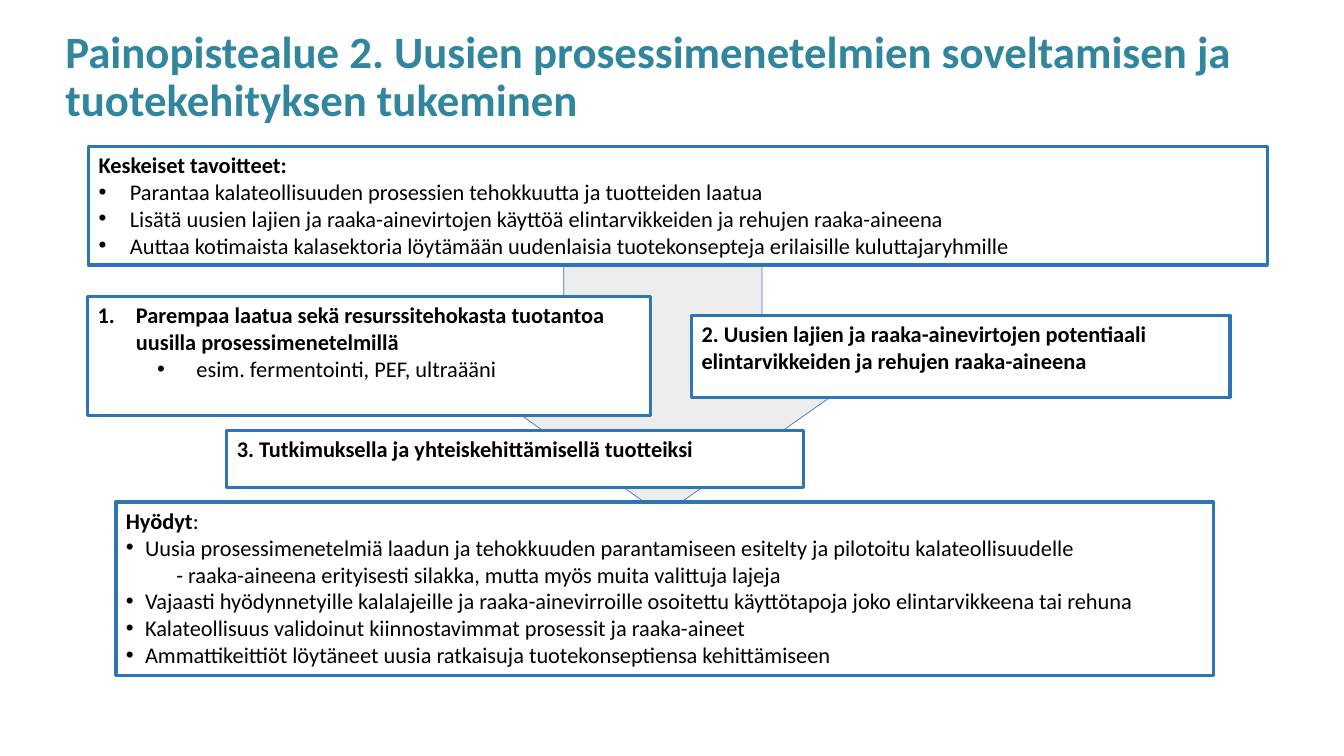
import pptx
import pptx.dml.color
import pptx.enum.shapes
import pptx.enum.text
import pptx.oxml
import pptx.oxml.ns
import pptx.util

Inches = pptx.util.Inches
SHAPES = pptx.enum.shapes.MSO_SHAPE
ANCHORS = pptx.enum.text.MSO_ANCHOR

FONT = "Calibri"
TEAL, BLUE, ARROW_BLUE = "31859C", "2E75B6", "4472C4"
BLACK, WHITE, GREY = "000000", "FFFFFF", "EDEDED"

TITLE = "Painopistealue 2. Uusien prosessimenetelmien soveltamisen ja tuotekehityksen tukeminen"
TITLE_AREA = (0.55, 0.24, 11.95, 1.07)
ARROW_AREA = (4.61, 2.34, 3.93, 2.77)

HEADING = {"bold": True}
NUMBERED = {"bold": True, "margin": 0.38, "hanging": 0.38, "bullet": "1."}
EXAMPLE = {"margin": 0.98, "hanging": 0.39, "bullet": "•"}
GOAL = {"margin": 0.31, "hanging": 0.31, "bullet": "•"}
BENEFIT = {"margin": 0.19, "hanging": 0.19, "bullet": "•"}
DETAIL = {"margin": 0.5, "level": 1}

BOXES = [
    ((2.25, 4.27, 5.72, 0.57), [
        ("3. Tutkimuksella ja yhteiskehittämisellä tuotteiksi", HEADING),
    ]),
    ((0.87, 2.94, 5.58, 1.18), [
        ("Parempaa laatua sekä resurssitehokasta tuotantoa uusilla prosessimenetelmillä", NUMBERED),
        ("esim. fermentointi, PEF, ultraääni", EXAMPLE),
    ]),
    ((1.15, 4.98, 10.89, 1.72), [
        ("Hyödyt", {"bold": True, "plain_ending": ":"}),
        ("Uusia prosessimenetelmiä laadun ja tehokkuuden parantamiseen esitelty ja pilotoitu kalateollisuudelle", BENEFIT),
        ("- raaka-aineena erityisesti silakka, mutta myös muita valittuja lajeja", DETAIL),
        ("Vajaasti hyödynnetyille kalalajeille ja raaka-ainevirroille osoitettu käyttötapoja joko elintarvikkeena tai rehuna", BENEFIT),
        ("Kalateollisuus validoinut kiinnostavimmat prosessit ja raaka-aineet", BENEFIT),
        ("Ammattikeittiöt löytäneet uusia ratkaisuja tuotekonseptiensa kehittämiseen", BENEFIT),
    ]),
    ((0.88, 1.45, 11.69, 1.18), [
        ("Keskeiset tavoitteet:", HEADING),
        ("Parantaa kalateollisuuden prosessien tehokkuutta ja tuotteiden laatua", GOAL),
        ("Lisätä uusien lajien ja raaka-ainevirtojen käyttöä elintarvikkeiden ja rehujen raaka-aineena", GOAL),
        ("Auttaa kotimaista kalasektoria löytämään uudenlaisia tuotekonsepteja erilaisille kuluttajaryhmille", GOAL),
    ]),
    ((6.86, 3.13, 5.34, 0.81), [
        ("2. Uusien lajien ja raaka-ainevirtojen potentiaali elintarvikkeiden ja rehujen raaka-aineena", HEADING),
    ]),
]


def colour(hex_value):
    return pptx.dml.color.RGBColor.from_string(hex_value)


def add_bullet(para, bullet):
    properties = para._p.get_or_add_pPr()
    if bullet == "1.":
        mark = pptx.oxml.parse_xml(
            f'<a:buAutoNum {pptx.oxml.ns.nsdecls("a")} type="arabicPeriod"/>')
    else:
        face = pptx.oxml.parse_xml(f'<a:buFont {pptx.oxml.ns.nsdecls("a")} typeface="Arial"/>')
        properties.append(face)
        mark = pptx.oxml.parse_xml(f'<a:buChar {pptx.oxml.ns.nsdecls("a")} char="{bullet}"/>')
    properties.append(mark)


def write(para, text, size=16, fill=BLACK, bold=False, plain_ending="",
          margin=0, hanging=0, bullet=None, level=0, spacing=1.0):
    para.alignment = pptx.enum.text.PP_ALIGN.LEFT
    para.level = level
    para.line_spacing = spacing
    properties = para._p.get_or_add_pPr()
    properties.set("marL", str(Inches(margin)))
    properties.set("indent", str(-Inches(hanging)))
    if bullet:
        add_bullet(para, bullet)
    for words, weight in ((text, bold), (plain_ending, False)):
        if words:
            span = para.add_run()
            span.text = words
            span.font.name = FONT
            span.font.size = pptx.util.Pt(size)
            span.font.bold = weight
            span.font.color.rgb = colour(fill)


def add_figure(page, kind, area, fill, line, width):
    figure = page.shapes.add_shape(kind, *map(Inches, area))
    figure.shadow.inherit = False
    figure.fill.solid()
    figure.fill.fore_color.rgb = colour(fill)
    figure.line.color.rgb = colour(line)
    figure.line.width = pptx.util.Pt(width)
    return figure


def main():
    deck = pptx.Presentation()
    deck.slide_width, deck.slide_height = Inches(13.33), Inches(7.5)
    page = deck.slides.add_slide(deck.slide_layouts[6])

    title = page.shapes.add_textbox(*map(Inches, TITLE_AREA)).text_frame
    title.word_wrap = True
    title.vertical_anchor = ANCHORS.MIDDLE
    write(title.paragraphs[0], TITLE, size=32, fill=TEAL, bold=True, spacing=0.9)

    add_figure(page, SHAPES.DOWN_ARROW, ARROW_AREA, GREY, ARROW_BLUE, 0.5)

    for area, lines in BOXES:
        frame = add_figure(page, SHAPES.RECTANGLE, area, WHITE, BLUE, 2.25).text_frame
        frame.word_wrap = True
        frame.vertical_anchor = ANCHORS.TOP
        for index, (text, style) in enumerate(lines):
            para = frame.add_paragraph() if index else frame.paragraphs[0]
            write(para, text, **style)

    deck.save("out.pptx")


if __name__ == "__main__":
    main()
